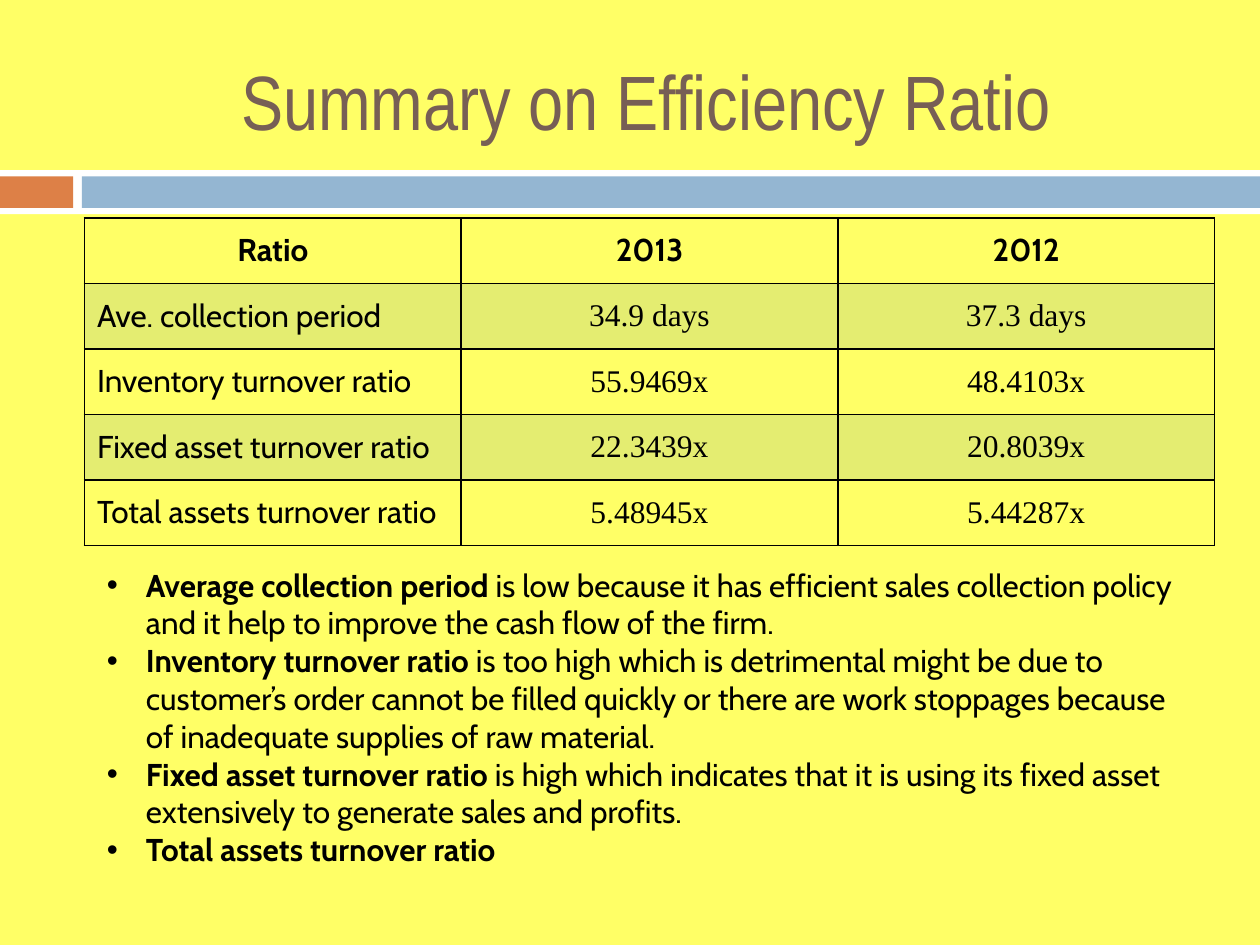
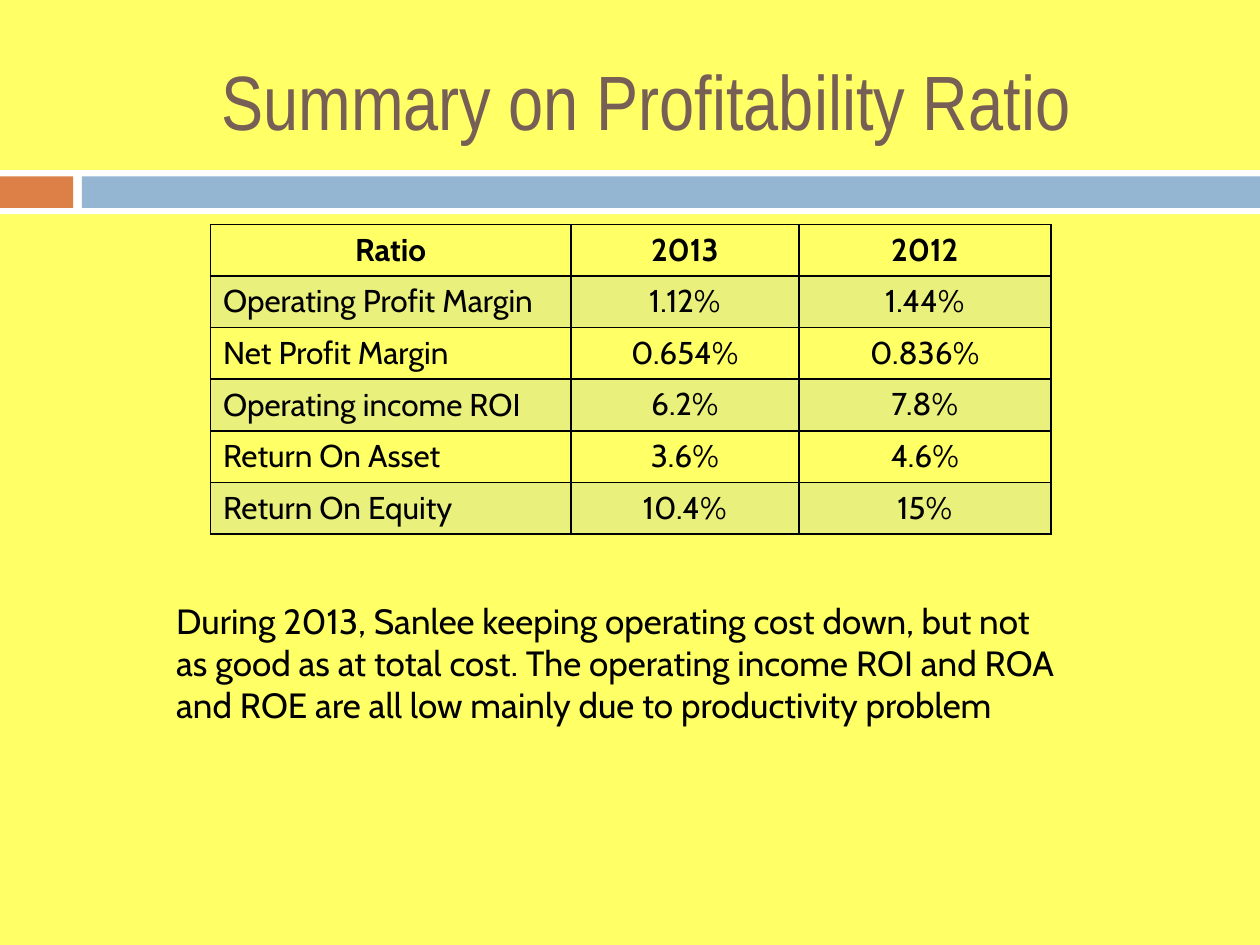
import lxml.etree
import pptx
import pptx.dml.color
import pptx.enum.shapes
import pptx.enum.text
import pptx.oxml.ns
import pptx.util

RGBColor = pptx.dml.color.RGBColor
ALIGN = pptx.enum.text.PP_ALIGN
ANCHOR = pptx.enum.text.MSO_ANCHOR
AUTO_SIZE = pptx.enum.text.MSO_AUTO_SIZE

YELLOW = RGBColor(0xFF, 0xFF, 0x66)
WHITE = RGBColor(0xFF, 0xFF, 0xFF)
ORANGE = RGBColor(0xDD, 0x80, 0x47)
BLUE = RGBColor(0x94, 0xB6, 0xD2)
GREEN = RGBColor(0x7B, 0xA7, 0x9D)
BROWN = RGBColor(0x77, 0x5F, 0x55)
BLACK = RGBColor(0x00, 0x00, 0x00)

SLIDE_WIDTH = pptx.util.Inches(10)
SLIDE_HEIGHT = pptx.util.Inches(7.5)
COLUMN = SLIDE_WIDTH / 10
ROW = SLIDE_HEIGHT / 7.5

TITLE_FONT = {"name": "Arial Narrow", "size": pptx.util.Pt(44), "color": BROWN, "bold": False}
BODY_FONT = {"name": "Cabin", "size": pptx.util.Pt(18), "color": BLACK, "bold": False}
HEADER_FONT = {**BODY_FONT, "bold": True}
NUMBER_FONT = {**BODY_FONT, "name": "Times New Roman"}
LARGE_FONT = {**BODY_FONT, "size": pptx.util.Pt(20)}

BANDS = [
    ((0, 1.35, 10, 0.35), WHITE),
    ((0, 1.4, 0.58, 0.25), ORANGE),
    ((0.65, 1.4, 9.35, 0.25), BLUE),
]

EFFICIENCY_ROWS = [
    ("Ratio", "2013", "2012"),
    ("Ave. collection period", "34.9 days", "37.3 days"),
    ("Inventory turnover ratio", "55.9469x", "48.4103x"),
    ("Fixed asset turnover ratio", "22.3439x", "20.8039x"),
    ("Total assets turnover ratio", "5.48945x", "5.44287x"),
]
EFFICIENCY_NOTES = [
    ("Average collection period",
     " is low because it has efficient sales collection policy and it help to "
     "improve the cash flow of the firm."),
    ("Inventory turnover ratio",
     " is too high which is detrimental might be due to customer’s order cannot be "
     "filled quickly or there are work stoppages because of inadequate supplies of "
     "raw material."),
    ("Fixed asset turnover ratio",
     " is high which indicates that it is using its fixed asset extensively to "
     "generate sales and profits."),
    ("Total assets turnover ratio", ""),
]
PROFITABILITY_ROWS = [
    ("Ratio", "2013", "2012"),
    ("Operating Profit Margin", "1.12%", "1.44%"),
    ("Net Profit Margin", "0.654%", "0.836%"),
    ("Operating income ROI", "6.2%", "7.8%"),
    ("Return On Asset", "3.6%", "4.6%"),
    ("Return On Equity", "10.4%", "15%"),
]
PROFITABILITY_NOTE = (
    "During 2013, Sanlee keeping operating cost down, but not as good as at total cost. "
    "The operating income ROI and ROA and ROE are all low mainly due to productivity problem"
)


def place(left, top, width, height):
    """Turn grid columns and rows into slide lengths."""
    return round(left * COLUMN), round(top * ROW), round(width * COLUMN), round(height * ROW)


def add_element(parent, tag, **attributes):
    """Append a DrawingML element to its parent."""
    return lxml.etree.SubElement(parent, pptx.oxml.ns.qn(tag), attributes)


def add_run(paragraph, text, font_values):
    """Add a run of text with the given font values."""
    run = paragraph.add_run()
    run.text = text
    for name, value in font_values.items():
        if name == "color":
            run.font.color.rgb = value
        else:
            setattr(run.font, name, value)


def add_title(slide, text):
    """Place and format the slide's title."""
    title = slide.shapes.title
    title.left, title.top, title.width, title.height = place(0.67, 0.25, 8.92, 1.08)
    frame = title.text_frame
    frame.auto_size = AUTO_SIZE.NONE
    frame.vertical_anchor = ANCHOR.MIDDLE
    frame.paragraphs[0].alignment = ALIGN.CENTER
    add_run(frame.paragraphs[0], text, TITLE_FONT)


def add_bands(slide):
    """Draw the coloured strip below the title."""
    for area, color in BANDS:
        band = slide.shapes.add_shape(pptx.enum.shapes.MSO_SHAPE.RECTANGLE, *place(*area))
        band.shadow.inherit = False
        band.fill.solid()
        band.fill.fore_color.rgb = color
        band.line.fill.background()


def add_slide(presentation, title):
    """Add a slide with the shared title and bands."""
    slide = presentation.slides.add_slide(presentation.slide_layouts[5])
    add_bands(slide)
    add_title(slide, title)
    return slide


def fill_cell(cell, color):
    """Tint a cell at 20% opacity, or leave it clear."""
    if color is None:
        cell.fill.background()
        return
    cell.fill.solid()
    cell.fill.fore_color.rgb = color
    color_element = next(cell._tc.tcPr.iter(pptx.oxml.ns.qn("a:srgbClr")))
    add_element(color_element, "a:alpha", val="20000")


def add_borders(cell):
    """Draw thin black lines on all sides of a cell."""
    properties = cell._tc.get_or_add_tcPr()
    for index, tag in enumerate(("a:lnL", "a:lnR", "a:lnT", "a:lnB")):
        line = add_element(properties, tag, w=str(pptx.util.Pt(1)))
        add_element(add_element(line, "a:solidFill"), "a:srgbClr", val=str(BLACK))
        properties.insert(index, line)


def add_ratio_table(slide, left, top, column_widths, row_height, rows, tint,
                    number_font, number_anchor):
    """Add a bordered table of ratios with every second row tinted."""
    area = place(left, top, sum(column_widths), row_height * len(rows))
    table = slide.shapes.add_table(len(rows), len(column_widths), *area).table
    table.first_row = table.horz_banding = False
    for column, width in zip(table.columns, column_widths):
        column.width = round(width * COLUMN)
    for row_index, values in enumerate(rows):
        table.rows[row_index].height = round(row_height * ROW)
        for column_index, value in enumerate(values):
            is_header = row_index == 0
            is_label = column_index == 0 and not is_header
            font = HEADER_FONT if is_header else BODY_FONT if is_label else number_font
            cell = table.cell(row_index, column_index)
            cell.vertical_anchor = ANCHOR.MIDDLE if is_label else number_anchor
            paragraph = cell.text_frame.paragraphs[0]
            paragraph.alignment = ALIGN.LEFT if is_label else ALIGN.CENTER
            add_run(paragraph, value, font)
            fill_cell(cell, tint if row_index % 2 else None)
            add_borders(cell)


def add_text_frame(slide, area):
    """Add a wrapping text box and return its frame."""
    frame = slide.shapes.add_textbox(*place(*area)).text_frame
    frame.word_wrap = True
    frame.auto_size = AUTO_SIZE.SHAPE_TO_FIT_TEXT
    return frame


def add_bullets(slide, area, notes):
    """Add bulleted notes that each open with a bold term."""
    frame = add_text_frame(slide, area)
    indent = round(0.31 * COLUMN)
    for index, (term, explanation) in enumerate(notes):
        paragraph = frame.add_paragraph() if index else frame.paragraphs[0]
        properties = paragraph._p.get_or_add_pPr()
        properties.set("marL", str(indent))
        properties.set("indent", str(-indent))
        add_element(properties, "a:buFont", typeface="Arial")
        add_element(properties, "a:buChar", char="•")
        add_run(paragraph, term, HEADER_FONT)
        if explanation:
            add_run(paragraph, explanation, BODY_FONT)


def main():
    """Build both ratio summaries and save them."""
    presentation = pptx.Presentation()
    presentation.slide_width = SLIDE_WIDTH
    presentation.slide_height = SLIDE_HEIGHT
    background = presentation.slide_master.background.fill
    background.solid()
    background.fore_color.rgb = YELLOW

    efficiency = add_slide(presentation, "Summary on Efficiency Ratio")
    add_ratio_table(efficiency, 0.67, 1.73, [2.99] * 3, 0.52, EFFICIENCY_ROWS, GREEN,
                    NUMBER_FONT, ANCHOR.MIDDLE)
    add_bullets(efficiency, (0.75, 4.44, 8.82, 2.52), EFFICIENCY_NOTES)

    profitability = add_slide(presentation, "Summary on Profitability Ratio")
    add_ratio_table(profitability, 1.67, 1.78, [2.86, 1.81, 2], 0.41, PROFITABILITY_ROWS, BLUE,
                    BODY_FONT, ANCHOR.TOP)
    note = add_text_frame(profitability, (1.3, 4.71, 7.24, 1.11))
    add_run(note.paragraphs[0], PROFITABILITY_NOTE, LARGE_FONT)

    presentation.save("out.pptx")


if __name__ == "__main__":
    main()
